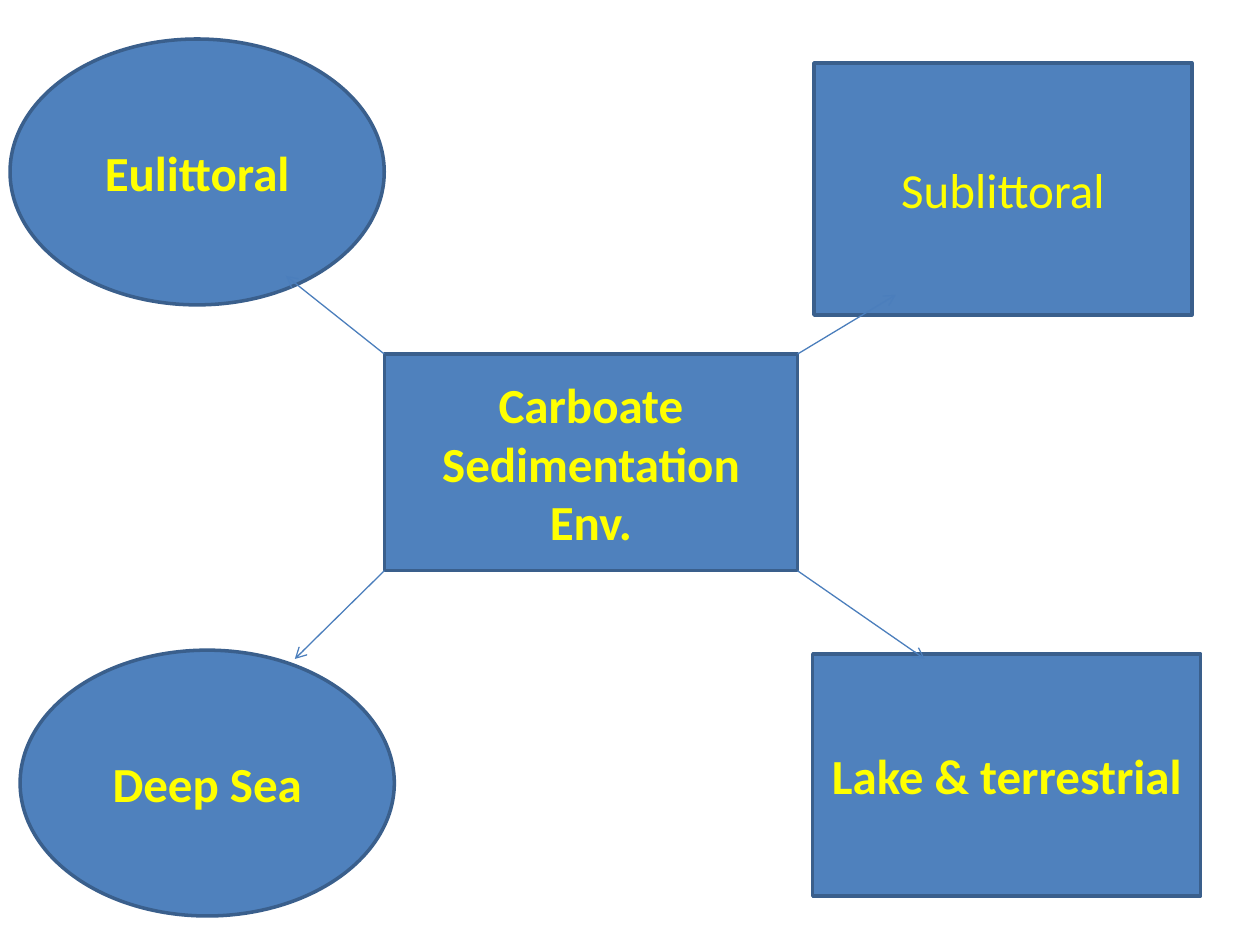
import dataclasses
import lxml.etree
import pptx
import pptx.dml.color
import pptx.enum.shapes
import pptx.enum.text
import pptx.oxml.ns
import pptx.util

Inches = pptx.util.Inches
Kind = pptx.enum.shapes.MSO_SHAPE
FILL, EDGE, ARROW, INK = "4F81BD", "3A5F8C", "4B7EBC", "FFFF00"


@dataclasses.dataclass
class Node:
    text: str
    left: float
    top: float
    width: float
    height: float
    kind: Kind = Kind.RECTANGLE
    bold: bool = True
    title: bool = False


@dataclasses.dataclass
class Ray:
    right: bool
    low: bool
    x: float
    y: float


HUB = Node("Carboate Sedimentation Env.", 3.05, 2.81, 3.28, 1.72)
NODES = [
    Node("Sublittoral", 6.46, 0.5, 3, 2, bold=False, title=True),
    HUB,
    Node("Eulittoral", 0.08, 0.31, 2.97, 2.11, Kind.OVAL),
    Node("Lake & terrestrial", 6.45, 5.19, 3.08, 1.92),
    Node("Deep Sea", 0.16, 5.16, 2.97, 2.11, Kind.OVAL),
]
RAYS = [
    Ray(True, False, 7.11, 2.34),
    Ray(False, False, 2.27, 2.19),
    Ray(False, True, 2.34, 5.23),
    Ray(True, True, 7.34, 5.23),
]


def color(code: str) -> pptx.dml.color.RGBColor:
    return pptx.dml.color.RGBColor.from_string(code)


def write(shape, text: str, *, size: float = 28, bold: bool = True, ink: str = INK) -> None:
    frame = shape.text_frame
    frame.word_wrap = True
    frame.auto_size = pptx.enum.text.MSO_AUTO_SIZE.NONE
    frame.vertical_anchor = pptx.enum.text.MSO_ANCHOR.MIDDLE
    para = frame.paragraphs[0]
    para.alignment = pptx.enum.text.PP_ALIGN.CENTER
    run = para.add_run()
    run.text = text
    run.font.name = "Calibri"
    run.font.size = pptx.util.Pt(size)
    run.font.bold = bold
    run.font.color.rgb = color(ink)


def draw_node(slide, node: Node) -> None:
    box = [Inches(n) for n in (node.left, node.top, node.width, node.height)]
    if node.title:
        shape = slide.shapes.title
        shape.left, shape.top, shape.width, shape.height = box
    else:
        shape = slide.shapes.add_shape(node.kind, *box)
        shape.shadow.inherit = False
    shape.fill.solid()
    shape.fill.fore_color.rgb = color(FILL)
    shape.line.color.rgb = color(EDGE)
    shape.line.width = pptx.util.Pt(2)
    write(shape, node.text, bold=node.bold)


def draw_ray(slide, ray: Ray) -> None:
    x = HUB.left + HUB.width * ray.right
    y = HUB.top + HUB.height * ray.low
    line = slide.shapes.add_connector(
        pptx.enum.shapes.MSO_CONNECTOR.STRAIGHT,
        Inches(x), Inches(y), Inches(ray.x), Inches(ray.y),
    )
    line.line.color.rgb = color(ARROW)
    line.line.width = pptx.util.Pt(0.75)
    name = pptx.oxml.ns.qn
    props = line._element.spPr
    lxml.etree.SubElement(props.find(name("a:ln")), name("a:tailEnd"), type="arrow")
    lxml.etree.SubElement(props, name("a:effectLst"))


def main() -> None:
    deck = pptx.Presentation()
    deck.slide_width, deck.slide_height = Inches(10), Inches(7.5)
    slide = deck.slides.add_slide(deck.slide_layouts.get_by_name("Title Only"))
    for node in NODES:
        draw_node(slide, node)
    for ray in RAYS:
        draw_ray(slide, ray)
    deck.save("out.pptx")


if __name__ == "__main__":
    main()
